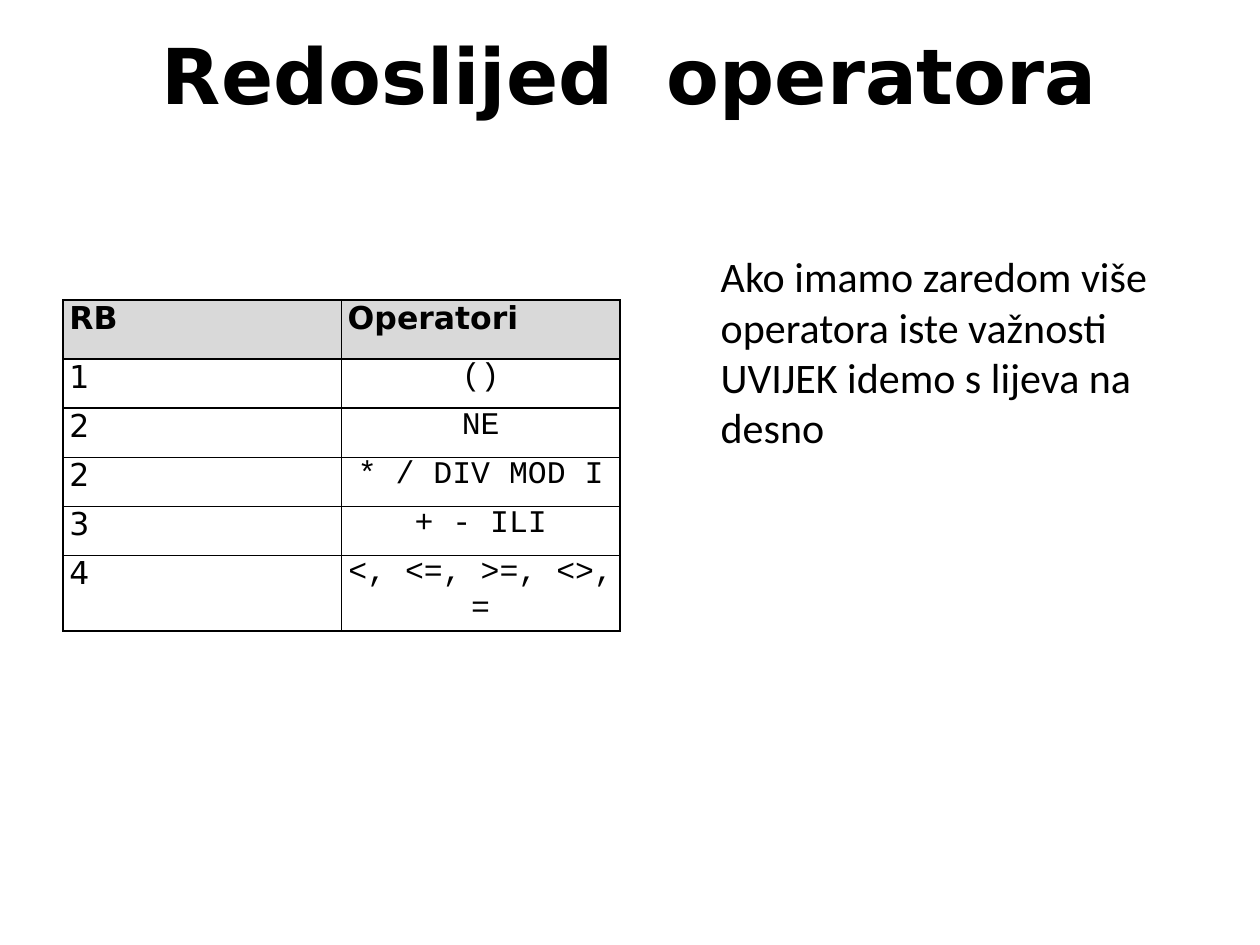
from lxml.etree import SubElement
from pptx import Presentation
from pptx.dml.color import RGBColor
from pptx.enum.text import MSO_ANCHOR, PP_ALIGN
from pptx.oxml.ns import qn
from pptx.util import Inches, Pt

BLACK = RGBColor(0x00, 0x00, 0x00)
HEADER_GRAY = RGBColor(0xD9, 0xD9, 0xD9)

TITLE_FORMAT = {"name": "DejaVu Sans", "size": Pt(44), "bold": True}
HEADER_FORMAT = {"name": "DejaVu Sans", "size": Pt(18), "bold": True}
RANK_FORMAT = {"name": "DejaVu Sans", "size": Pt(18), "bold": False}
OPERATOR_FORMAT = {"name": "Courier New", "size": Pt(18), "bold": False}
NOTE_FORMAT = {"name": "Calibri", "size": Pt(24), "bold": False}

OPERATOR_ROWS = [
    ("RB", "Operatori"),
    ("1", "()"),
    ("2", "NE"),
    ("2", "* / DIV MOD I"),
    ("3", "+ - ILI"),
    ("4", "<, <=, >=, <>, ="),
]


def write_text(text_frame, text, text_format, alignment):
    paragraph = text_frame.paragraphs[0]
    paragraph.alignment = alignment
    run = paragraph.add_run()
    run.text = text
    for attribute, value in text_format.items():
        setattr(run.font, attribute, value)
    run.font.color.rgb = BLACK


def add_text(slide, box, text, text_format, alignment, left_inset=0.1, top_inset=0.05):
    text_frame = slide.shapes.add_textbox(*map(Inches, box)).text_frame
    text_frame.word_wrap = True
    text_frame.vertical_anchor = MSO_ANCHOR.TOP
    text_frame.margin_left = Inches(left_inset)
    text_frame.margin_top = Inches(top_inset)
    write_text(text_frame, text, text_format, alignment)


def set_cell_borders(cell):
    properties = cell._tc.get_or_add_tcPr()
    for position, side in enumerate(("a:lnL", "a:lnR", "a:lnT", "a:lnB")):
        line = SubElement(properties, qn(side), w=str(Pt(1)))
        fill = SubElement(line, qn("a:solidFill"))
        SubElement(fill, qn("a:srgbClr"), val=str(BLACK))
        # Borders come before the fill in the cell properties
        properties.insert(position, line)


def add_operator_table(slide, box):
    row_count, column_count = len(OPERATOR_ROWS), len(OPERATOR_ROWS[0])
    table = slide.shapes.add_table(row_count, column_count, *map(Inches, box)).table
    table.first_row = table.horz_banding = False
    for row_index, texts in enumerate(OPERATOR_ROWS):
        is_header = row_index == 0
        table.rows[row_index].height = Inches(0.47 if is_header else 0.39)
        for column_index, text in enumerate(texts):
            cell = table.cell(row_index, column_index)
            cell.margin_left = cell.margin_right = Inches(0.05)
            cell.margin_top = cell.margin_bottom = 0
            if is_header:
                cell.fill.solid()
                cell.fill.fore_color.rgb = HEADER_GRAY
                text_format = HEADER_FORMAT
            else:
                cell.fill.background()
                text_format = OPERATOR_FORMAT if column_index else RANK_FORMAT
            centered = column_index and not is_header
            alignment = PP_ALIGN.CENTER if centered else PP_ALIGN.JUSTIFY
            write_text(cell.text_frame, text, text_format, alignment)
            set_cell_borders(cell)


def main():
    presentation = Presentation()
    presentation.slide_width = Inches(10)
    presentation.slide_height = Inches(7.5)
    slide = presentation.slides.add_slide(presentation.slide_layouts[6])

    # Title
    add_text(slide, (0.5, 0.22, 9, 1.33), "Redoslijed  operatora",
             TITLE_FORMAT, PP_ALIGN.CENTER, top_inset=0)
    # Operator precedence
    add_operator_table(slide, (0.5, 2.38, 4.42, 2.42))
    # Rule for equal precedence
    add_text(slide, (5.24, 1.94, 4.42, 2.36),
             "Ako imamo zaredom više operatora iste važnosti UVIJEK idemo s lijeva na desno",
             NOTE_FORMAT, PP_ALIGN.LEFT, left_inset=0.48)

    presentation.save("out.pptx")


if __name__ == "__main__":
    main()
